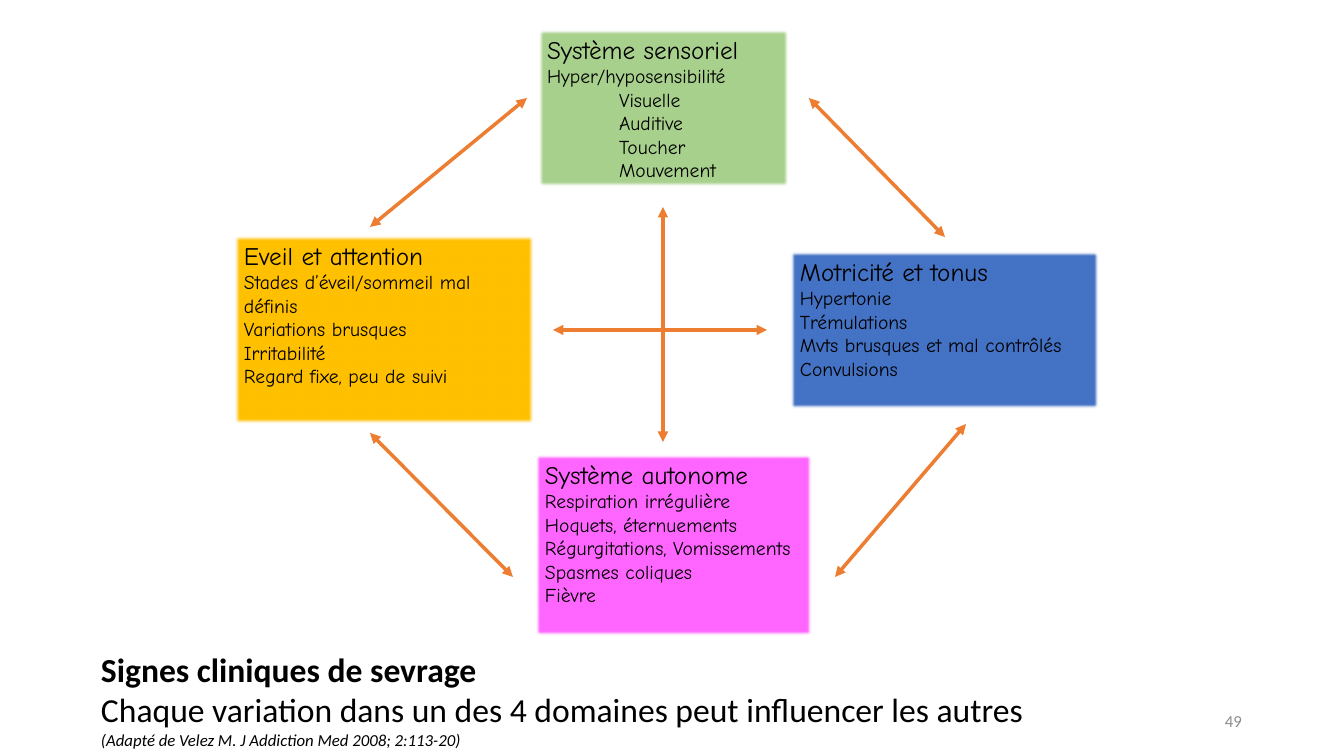
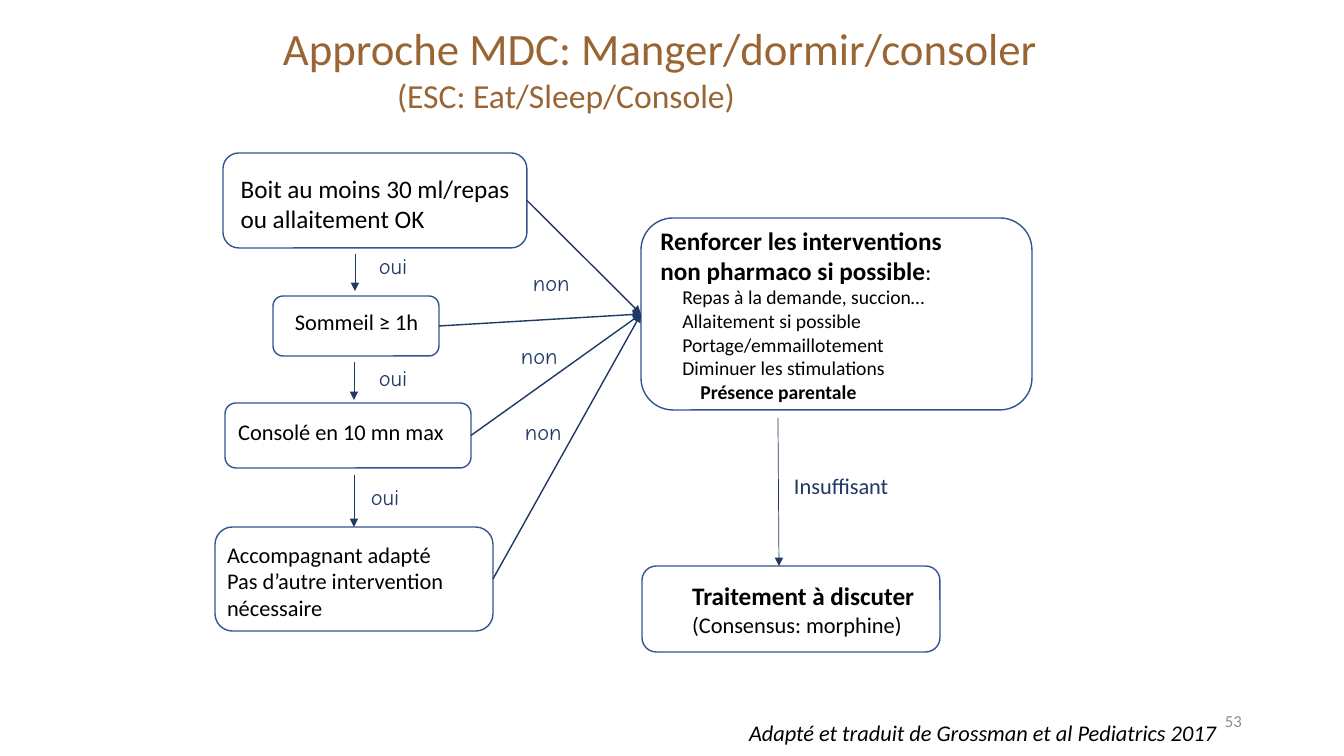
from dataclasses import dataclass

from lxml.etree import SubElement
from pptx import Presentation
from pptx.dml.color import RGBColor
from pptx.enum.shapes import MSO_CONNECTOR as Link, MSO_SHAPE as Preset
from pptx.enum.text import MSO_ANCHOR as Anchor, MSO_AUTO_SIZE as AutoSize, PP_ALIGN as Align
from pptx.oxml.ns import qn
from pptx.util import Pt

PX = 914400 / 100.8
BLACK, WHITE, GREY, BROWN = "000000", "FFFFFF", "8C8C8C", "996633"
GREEN, BLUE, PINK, AMBER, ORANGE = "A9D18E", "4472C4", "FF66FF", "FFC000", "ED7D31"
NAVY, OUTLINE = "203864", "325491"
BODY_FONT, HAND_FONT = "Calibri", "Comic Neue"
LEFT_SIDE, RIGHT_SIDE = 1, 3


@dataclass
class Line:
    text: str
    size: int
    bold: bool = False
    italic: bool = False
    indent: int = 0
    suffix: str = ""


def px(length):
    return round(length * PX)


def paint(color_format, color):
    color_format.rgb = RGBColor.from_string(color)


def fill(target, color):
    target.fill.solid()
    paint(target.fill.fore_color, color)


def write(holder, lines, color=BLACK, font=BODY_FONT, align=Align.LEFT,
          anchor=Anchor.TOP, insets=(10, 5, 10, 5)):
    frame = holder.text_frame
    frame.word_wrap = True
    frame.auto_size = AutoSize.NONE
    frame.vertical_anchor = anchor
    frame.margin_left, frame.margin_top, frame.margin_right, frame.margin_bottom = map(px, insets)
    frame.text = "\n".join(line.text for line in lines)
    for paragraph, line in zip(frame.paragraphs, lines):
        paragraph.alignment = align
        if line.indent:
            paragraph._p.get_or_add_pPr().set("marL", str(px(line.indent)))
        if line.suffix:
            paragraph.add_run().text = line.suffix
        for position, run in enumerate(paragraph.runs):
            run.font.name = font
            run.font.size = Pt(line.size if position == 0 else 16)
            run.font.bold = line.bold and position == 0
            run.font.italic = line.italic
            paint(run.font.color, color)


def add_label(slide, box, lines, **style):
    write(slide.shapes.add_textbox(*map(px, box)), lines, **style)


def add_arrow(slide, start, end, color, width, both=False):
    arrow = slide.shapes.add_connector(Link.STRAIGHT, *map(px, start + end))
    paint(arrow.line.color, color)
    arrow.line.width = Pt(width)
    outline = arrow.line._get_or_add_ln()
    for tip in ("a:headEnd", "a:tailEnd") if both else ("a:tailEnd",):
        SubElement(outline, qn(tip), type="triangle")
    SubElement(arrow._element.spPr, qn("a:effectLst"))
    return arrow


def add_page(deck, title_box, title_lines, number, color=BLACK):
    slide = deck.slides.add_slide(deck.slide_layouts[5])
    title = slide.shapes.title
    title.left, title.top, title.width, title.height = map(px, title_box)
    write(title, title_lines, color)
    add_label(slide, (950, 701, 302, 40), [Line(number, 12)], color=GREY,
              align=Align.RIGHT, anchor=Anchor.MIDDLE)
    return slide


def add_domain(slide, box, color, heading, signs, sub_signs=()):
    card = slide.shapes.add_shape(Preset.RECTANGLE, *map(px, box))
    fill(card, color)
    card.line.fill.background()
    effects = SubElement(card._element.spPr, qn("a:effectLst"))
    SubElement(effects, qn("a:softEdge"), rad=str(Pt(2.5)))
    lines = [Line(heading, 18), *(Line(sign, 14) for sign in signs)]
    write(card, lines + [Line(sign, 14, indent=72) for sign in sub_signs], font=HAND_FONT)


def add_step(slide, box, lines, left_inset, shift=0):
    step = slide.shapes.add_shape(Preset.ROUNDED_RECTANGLE, *map(px, box))
    step.shadow.inherit = False
    fill(step, WHITE)
    paint(step.line.color, OUTLINE)
    step.line.width = Pt(1)
    write(step, lines, anchor=Anchor.MIDDLE,
          insets=(left_inset, max(0, 2 * shift), 0, max(0, -2 * shift)))
    return step


def build_signs(deck):
    slide = add_page(deck, (91, 644, 1185, 112), [
        Line("Signes cliniques de sevrage", 24, bold=True),
        Line("Chaque variation dans un des 4 domaines peut influencer les autres", 24),
        Line("(Adapté de Velez M. J Addiction Med 2008; 2:113-20)", 12, italic=True),
    ], "49")
    add_domain(slide, (537, 29, 253, 159), GREEN, "Système sensoriel", ["Hyper/hyposensibilité"],
               ["Visuelle", "Auditive", "Toucher", "Mouvement"])
    add_domain(slide, (790, 251, 310, 159), BLUE, "Motricité et tonus",
               ["Hypertonie", "Trémulations", "Mvts brusques et mal contrôlés", "Convulsions"])
    add_domain(slide, (535, 454, 278, 183), PINK, "Système autonome",
               ["Respiration irrégulière", "Hoquets, éternuements",
                "Régurgitations, Vomissements", "Spasmes coliques", "Fièvre"])
    add_domain(slide, (234, 235, 301, 190), AMBER, "Eveil et attention",
               ["Stades d’éveil/sommeil mal définis", "Variations brusques",
                "Irritabilité", "Regard fixe, peu de suivi"])
    for start, end in [
        ((527, 98), (370, 227)), ((945, 237), (809, 98)), ((513, 577), (370, 433)),
        ((767, 330), (553, 330)), ((966, 424), (835, 577)), ((663, 207), (663, 442)),
    ]:
        add_arrow(slide, start, end, ORANGE, 2.5, both=True)


def build_approach(deck):
    slide = add_page(deck, (273, 16, 782, 105), [
        Line("Approche MDC: Manger/dormir/consoler", 32),
        Line("(ESC: Eat/Sleep/Console)", 24, indent=114),
    ], "53", BROWN)
    feeding = add_step(slide, (223, 153, 304, 95), [
        Line("Boit au moins 30 ml/repas", 18), Line("ou allaitement OK", 18)], 13, 3)
    sleep = add_step(slide, (273, 296, 166, 60), [Line("Sommeil ≥ 1h", 16)], 19, -4)
    consoling = add_step(slide, (225, 403, 246, 65), [Line("Consolé en 10 mn max", 16)], 10, -4)
    support = add_step(slide, (215, 527, 278, 104), [
        Line("Accompagnant adapté", 16), Line("Pas d’autre intervention", 16),
        Line("nécessaire", 16)], 7, 2)
    reinforcement = add_step(slide, (641, 218, 391, 192), [
        Line("Renforcer les interventions", 18, bold=True),
        Line("non pharmaco si possible", 18, bold=True, suffix=":"),
        Line("Repas à la demande, succion…", 14, indent=22),
        Line("Allaitement si possible", 14, indent=22),
        Line("Portage/emmaillotement", 14, indent=22),
        Line("Diminuer les stimulations", 14, indent=22),
        Line("Présence parentale", 14, bold=True, indent=40)], 10)
    add_step(slide, (642, 566, 298, 86), [
        Line("Traitement à discuter", 18, bold=True), Line("(Consensus: morphine)", 16)], 46)
    for step in (feeding, sleep, consoling, support):
        refusal = add_arrow(slide, (0, 0), (0, 0), NAVY, 1)
        refusal.begin_connect(step, RIGHT_SIDE)
        refusal.end_connect(reinforcement, LEFT_SIDE)
    for start, end in [
        ((355, 254), (355, 291)), ((354, 362), (354, 400)),
        ((354, 475), (354, 527)), ((778, 418), (779, 566)),
    ]:
        add_arrow(slide, start, end, NAVY, 0.5)
    for answer, corners in [
        ("oui", [(369, 247), (369, 359), (361, 478)]),
        ("non", [(523, 264), (511, 337), (515, 413)]),
    ]:
        for corner in corners:
            add_label(slide, corner + (65, 37), [Line(answer, 16)], color=NAVY, font=HAND_FONT)
    add_label(slide, (784, 467, 125, 37), [Line("Insuffisant", 16)], color=NAVY)
    add_label(slide, (739, 714, 500, 37), [
        Line("Adapté et traduit de Grossman et al Pediatrics 2017", 16, italic=True)])


def main():
    deck = Presentation()
    deck.slide_width, deck.slide_height = px(1344), px(756)
    build_signs(deck)
    build_approach(deck)
    deck.save("out.pptx")


if __name__ == "__main__":
    main()
